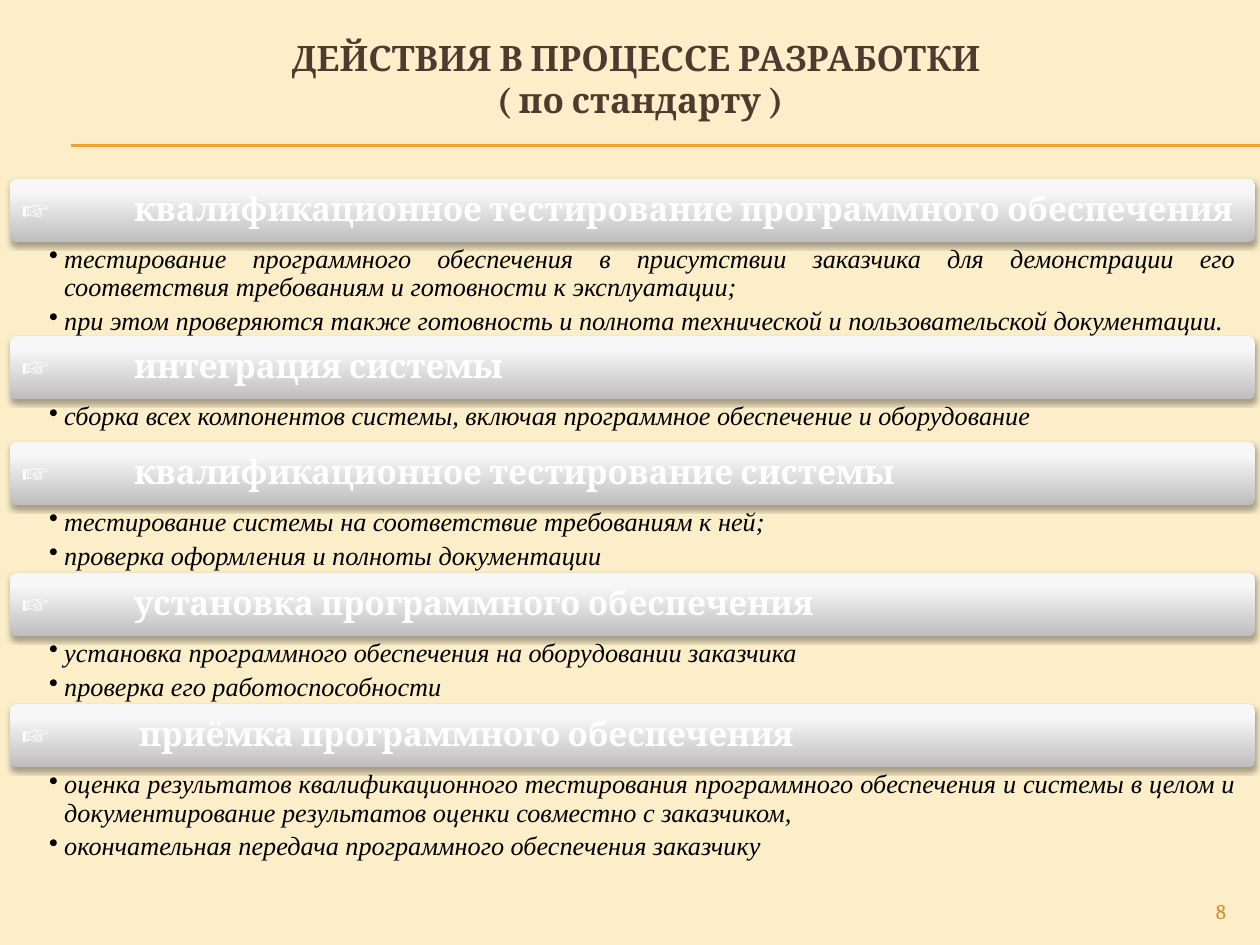
from lxml import etree
from pptx import Presentation
from pptx.dml.color import RGBColor
from pptx.enum.shapes import MSO_CONNECTOR as CONNECTOR, MSO_SHAPE as SHAPE
from pptx.enum.text import MSO_ANCHOR as ANCHOR, PP_ALIGN as ALIGN
from pptx.oxml.ns import qn
from pptx.util import Inches, Pt

COLORS = {
    "background": "FBEEC9", "rule": "F0A22E", "number": "D48F29",
    "title": "4E3B30", "bar_dark": "BEBEBE", "bar_light": "F7F7F7",
    "bar_text": "FFFFFF", "body": "000000", "shadow": "000000",
}
LEFT, TOP, WIDTH = 0.08, 1.42, 9.88
BAR_HEIGHT = 0.5

# Heading, heading indent, list height, list items
ACTIONS = [
    ("квалификационное тестирование программного обеспечения", 0.89, 0.75, [
        "тестирование программного обеспечения в присутствии заказчика для "
        "демонстрации его соответствия требованиям и готовности к эксплуатации;",
        "при этом проверяются также готовность и полнота технической и "
        "пользовательской документации."]),
    ("интеграция системы", 0.89, 0.34, [
        "сборка всех компонентов системы, включая программное обеспечение "
        "и оборудование"]),
    ("квалификационное тестирование системы", 0.89, 0.54, [
        "тестирование системы на соответствие требованиям к ней;",
        "проверка оформления и полноты документации"]),
    ("установка программного обеспечения", 0.89, 0.54, [
        "установка программного обеспечения на оборудовании заказчика",
        "проверка его работоспособности"]),
    ("приёмка программного обеспечения", 0.93, 0.75, [
        "оценка результатов квалификационного тестирования программного "
        "обеспечения и системы в целом и документирование результатов оценки "
        "совместно с заказчиком,",
        "окончательная передача программного обеспечения заказчику"]),
]


def color(name):
    return RGBColor.from_string(COLORS[name])


def add_text(para, text, size, tint, font="Cambria", bold=False, italic=False):
    span = para.add_run()
    span.text = text
    span.font.size = Pt(size)
    span.font.name = font
    span.font.bold = bold
    span.font.italic = italic
    span.font.color.rgb = color(tint)


def set_frame(frame, anchor, left, top, right, bottom):
    frame.word_wrap = True
    frame.vertical_anchor = anchor
    frame.margin_left, frame.margin_right = Inches(left), Inches(right)
    frame.margin_top, frame.margin_bottom = Inches(top), Inches(bottom)


def set_hanging(para, indent):
    props = para._p.get_or_add_pPr()
    props.set("marL", str(Inches(indent)))
    props.set("indent", str(-Inches(indent)))
    return props


def add_shadow(shape):
    shape.shadow.inherit = False
    effects = shape._element.spPr.find(qn("a:effectLst"))
    outer = etree.SubElement(effects, qn("a:outerShdw"), blurRad=str(Pt(3.1)),
                             dist=str(Pt(1.8)), dir="5400000", rotWithShape="0")
    tint = etree.SubElement(outer, qn("a:srgbClr"), val=COLORS["shadow"])
    etree.SubElement(tint, qn("a:alpha"), val="35000")


def add_title(page):
    title = page.shapes.title
    title.left, title.top = Inches(0.33), Inches(0.16)
    title.width, title.height = Inches(9.5), Inches(0.92)
    set_frame(title.text_frame, ANCHOR.MIDDLE, 0.1, 0.05, 0.1, 0.05)
    para = title.text_frame.paragraphs[0]
    para.alignment = ALIGN.CENTER
    lines = ["ДЕЙСТВИЯ В ПРОЦЕССЕ РАЗРАБОТКИ ", "( по стандарту )"]
    add_text(para, lines[0], 20, "title", bold=True)
    para.add_line_break()
    add_text(para, lines[1], 20, "title", bold=True)


def add_rule(page, y):
    rule = page.shapes.add_connector(
        CONNECTOR.STRAIGHT, Inches(0.56), Inches(y), Inches(10), Inches(y))
    rule.line.color.rgb = color("rule")
    rule.line.width = Pt(0.75)
    etree.SubElement(rule._element.spPr, qn("a:effectLst"))


def add_bar(page, top, heading, indent):
    bar = page.shapes.add_shape(SHAPE.ROUNDED_RECTANGLE, Inches(LEFT),
                                Inches(top), Inches(WIDTH), Inches(BAR_HEIGHT))
    bar.adjustments[0] = 0.1
    bar.fill.gradient()
    bar.fill.gradient_angle = 90
    stops = zip(bar.fill.gradient_stops, (0, 0.8), ("bar_dark", "bar_light"))
    for stop, position, tint in stops:
        stop.position = position
        stop.color.rgb = color(tint)
    bar.line.fill.background()
    add_shadow(bar)
    set_frame(bar.text_frame, ANCHOR.MIDDLE, 0.08, 0.08, 0.08, 0.08)
    para = bar.text_frame.paragraphs[0]
    para.alignment = ALIGN.LEFT
    para.line_spacing = 0.9
    set_hanging(para, indent)
    add_text(para, "☞\t", 19, "bar_text")
    add_text(para, heading, 19, "bar_text", bold=True)


def add_list(page, top, height, items):
    box = page.shapes.add_textbox(Inches(LEFT), Inches(top),
                                  Inches(WIDTH), Inches(height))
    frame = box.text_frame
    set_frame(frame, ANCHOR.TOP, 0.31, 0.03, 0.15, 0.03)
    for index, item in enumerate(items):
        para = frame.add_paragraph() if index else frame.paragraphs[0]
        para.alignment = ALIGN.JUSTIFY
        para.line_spacing = 0.9
        para.space_after = Pt(3)
        etree.SubElement(set_hanging(para, 0.12), qn("a:buChar"), char="•")
        add_text(para, item, 15, "body", font="Times New Roman", italic=True)


def add_page_number(page):
    box = page.shapes.add_textbox(Inches(9), Inches(7.08),
                                  Inches(0.83), Inches(0.27))
    set_frame(box.text_frame, ANCHOR.TOP, 0.1, 0.05, 0.1, 0.05)
    para = box.text_frame.paragraphs[0]
    para.alignment = ALIGN.RIGHT
    add_text(para, "8", 12, "number")


def main():
    deck = Presentation()
    deck.slide_width, deck.slide_height = Inches(10), Inches(7.5)
    page = deck.slides.add_slide(deck.slide_layouts[5])
    page.background.fill.solid()
    page.background.fill.fore_color.rgb = color("background")
    for y in (1.15, 1.16):
        add_rule(page, y)
    add_title(page)
    top = TOP
    for heading, indent, list_height, items in ACTIONS:
        add_bar(page, top, heading, indent)
        add_list(page, top + BAR_HEIGHT, list_height, items)
        top += BAR_HEIGHT + list_height
    add_page_number(page)
    deck.save("out.pptx")


if __name__ == "__main__":
    main()
